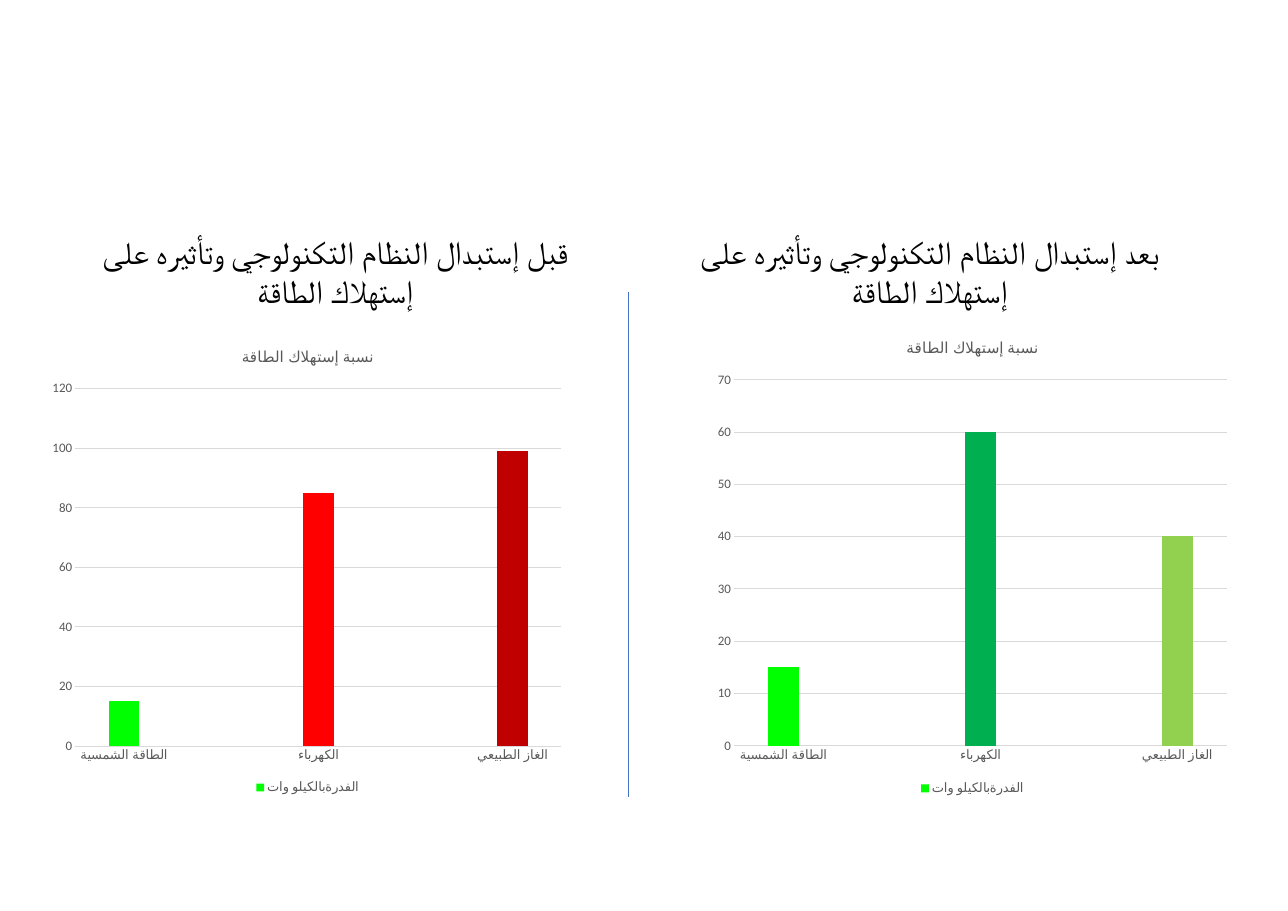
"""Builds a slide comparing energy use before and after a system change."""
import pptx
import pptx.chart.data
import pptx.dml.color
import pptx.enum.chart
import pptx.enum.shapes
import pptx.enum.text
import pptx.oxml
import pptx.oxml.ns
import pptx.util
from lxml import etree

Pt = pptx.util.Pt
RGBColor = pptx.dml.color.RGBColor
qn = pptx.oxml.ns.qn

BLACK = RGBColor(0x00, 0x00, 0x00)
BLUE = RGBColor(0x44, 0x72, 0xC4)
GREY = RGBColor(0x59, 0x59, 0x59)
LIGHT_GREY = RGBColor(0xD9, 0xD9, 0xD9)
LIME = RGBColor(0x00, 0xFF, 0x00)
RED = RGBColor(0xFF, 0x00, 0x00)
DARK_RED = RGBColor(0xC0, 0x00, 0x00)
GREEN = RGBColor(0x00, 0xB0, 0x50)
LIGHT_GREEN = RGBColor(0x92, 0xD0, 0x50)
FONT = "Calibri"

CATEGORIES = ["الطاقة الشمسية", "", "الكهرباء", "", "الغاز الطبيعي"]
SERIES = "الفدرةبالكيلو وات"
CHART_TITLE = "نسبة إستهلاك الطاقة"
PANELS = [
    {"heading": "بعد إستبدال النظام التكنولوجي وتأثيره على إستهلاك الطاقة",
     "left": 619.2, "chart": (653.8, 298.1, 489.6, 439.2),
     "plot": (0.05, 0.12, 0.93, 0.77), "values": [15, None, 60, None, 40],
     "colors": {0: LIME, 2: GREEN, 4: LIGHT_GREEN}, "max": 70, "step": 10},
    {"heading": "قبل إستبدال النظام التكنولوجي وتأثيره على إستهلاك الطاقة",
     "left": 69.8, "chart": (40.3, 307.4, 488.2, 429.1),
     "plot": (0.06, 0.12, 0.92, 0.77), "values": [15, None, 85, None, 99],
     "colors": {0: LIME, 2: RED, 4: DARK_RED}, "max": 120, "step": 20},
]


def set_font(font, size, color):
    font.name = FONT
    font.size = Pt(size)
    font.bold = False
    font.color.rgb = color


def place_plot(chart, box):
    plot_area = chart._chartSpace.chart.plotArea
    for old in plot_area.findall(qn("c:layout")):
        plot_area.remove(old)
    layout = etree.Element(qn("c:layout"))
    manual = etree.SubElement(layout, qn("c:manualLayout"))
    settings = [("layoutTarget", "inner"), ("xMode", "edge"), ("yMode", "edge")]
    for tag, value in settings + list(zip("xywh", box)):
        etree.SubElement(manual, qn("c:" + tag)).set("val", str(value))
    plot_area.insert(0, layout)


prs = pptx.Presentation()
prs.slide_width = Pt(1190.2)
prs.slide_height = Pt(841.7)
s = prs.slides.add_slide(prs.slide_layouts[6])

divider = s.shapes.add_connector(
    pptx.enum.shapes.MSO_CONNECTOR.STRAIGHT, Pt(580.3), Pt(270), Pt(580.3), Pt(736.6))
divider.line.color.rgb = BLUE
divider.line.width = Pt(0.5)
etree.SubElement(divider._element.spPr, qn("a:effectLst"))

for panel in PANELS:
    sp = s.shapes.add_textbox(Pt(panel["left"]), Pt(210.2), Pt(480.2), Pt(81.4))
    tf = sp.text_frame
    tf.word_wrap = True
    tf.auto_size = pptx.enum.text.MSO_AUTO_SIZE.SHAPE_TO_FIT_TEXT
    tf.margin_left = tf.margin_right = Pt(8.6)
    tf.margin_top = tf.margin_bottom = Pt(4.3)
    p = tf.paragraphs[0]
    p.alignment = pptx.enum.text.PP_ALIGN.CENTER
    p._p.get_or_add_pPr().set("rtl", "1")
    r = p.add_run()
    r.text = panel["heading"]
    set_font(r.font, 29.8, BLACK)

for panel in PANELS:
    data = pptx.chart.data.CategoryChartData()
    data.categories = CATEGORIES
    data.add_series(SERIES, panel["values"])
    chart = s.shapes.add_chart(
        pptx.enum.chart.XL_CHART_TYPE.COLUMN_CLUSTERED,
        *[Pt(n) for n in panel["chart"]], data).chart
    set_font(chart.font, 10, BLACK)
    place_plot(chart, panel["plot"])

    chart.has_title = True
    chart.chart_title.include_in_layout = False
    p = chart.chart_title.text_frame.paragraphs[0]
    r = p.add_run()
    r.text = CHART_TITLE
    set_font(r.font, 14, GREY)

    chart.has_legend = True
    chart.legend.position = pptx.enum.chart.XL_LEGEND_POSITION.BOTTOM
    chart.legend.include_in_layout = False
    set_font(chart.legend.font, 12, GREY)

    for axis in (chart.category_axis, chart.value_axis):
        axis.major_tick_mark = pptx.enum.chart.XL_TICK_MARK.NONE
        axis.minor_tick_mark = pptx.enum.chart.XL_TICK_MARK.NONE
        set_font(axis.tick_labels.font, 12, GREY)
    grid = chart.value_axis.major_gridlines.format.line
    for line in (chart.category_axis.format.line, grid):
        line.color.rgb = LIGHT_GREY
        line.width = Pt(0.75)
    chart.value_axis.format.line.fill.background()
    chart.value_axis.minimum_scale = 0
    chart.value_axis.maximum_scale = panel["max"]
    chart.value_axis.major_unit = panel["step"]

    plot = chart.plots[0]
    plot.vary_by_categories = False
    plot.gap_width = 219
    plot.overlap = -27
    columns = plot.series[0]
    columns.format.fill.solid()
    columns.format.fill.fore_color.rgb = LIME
    for i, color in panel["colors"].items():
        fill = columns.points[i].format.fill
        fill.solid()
        fill.fore_color.rgb = color

prs.save("out.pptx")
